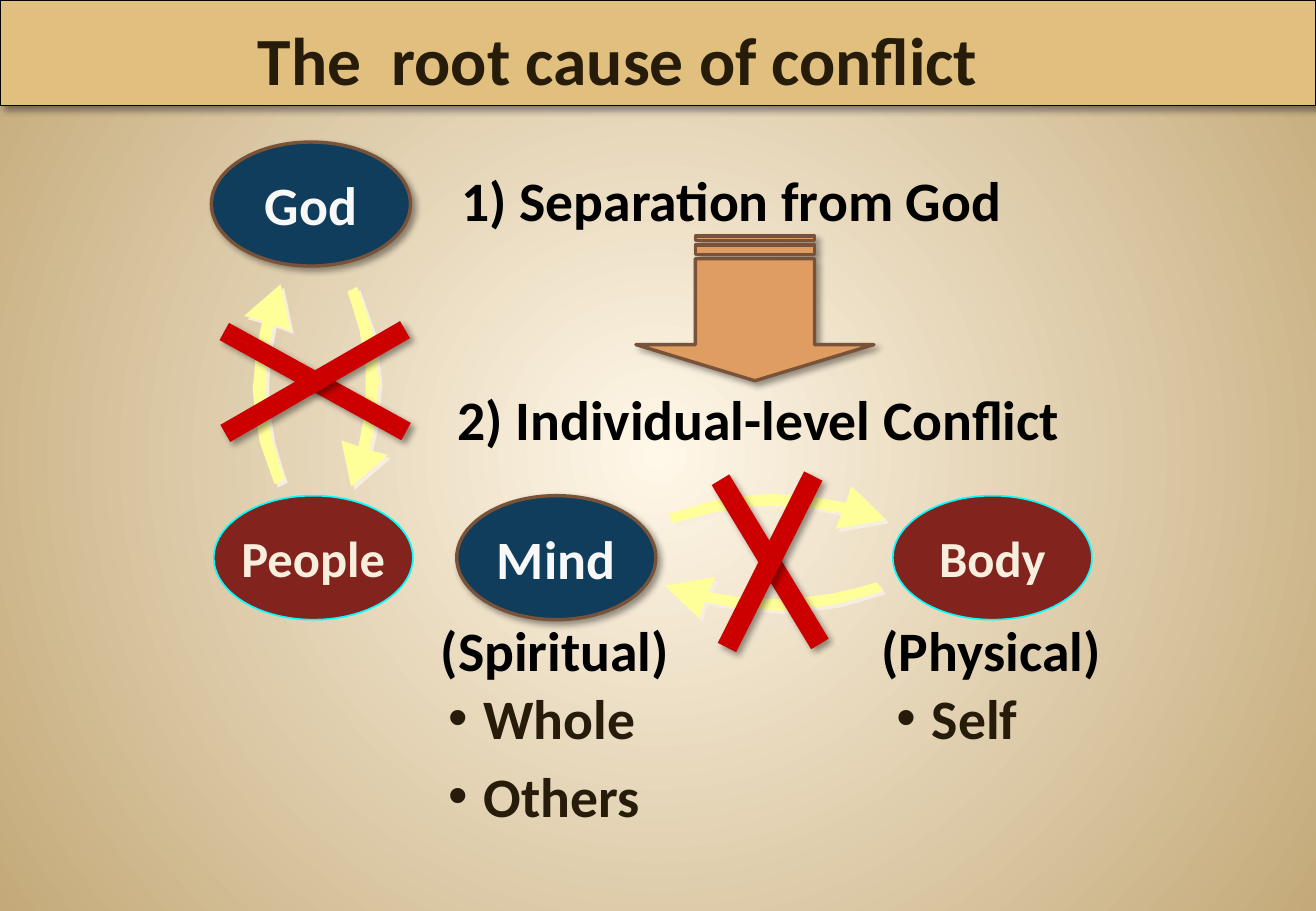
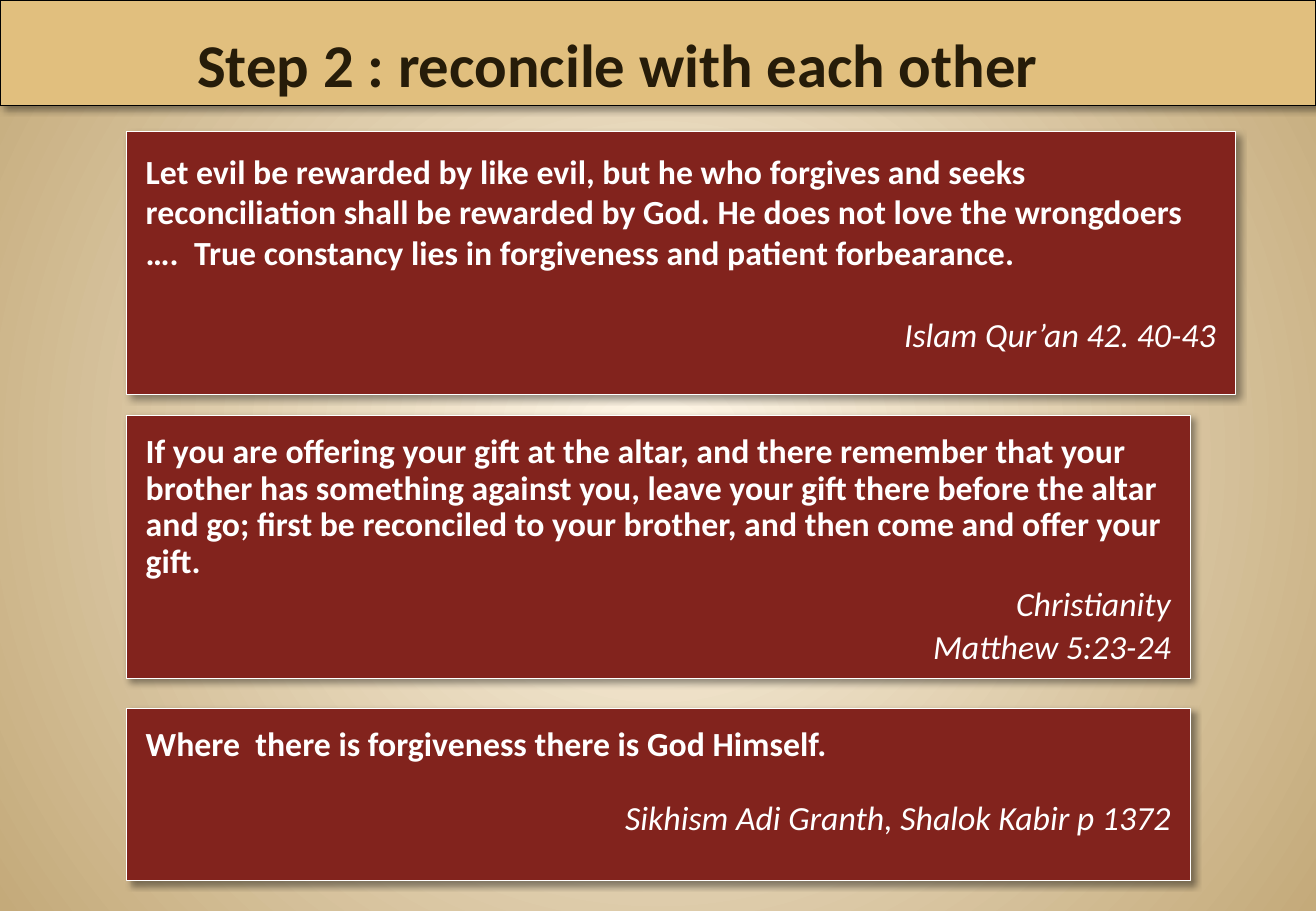
from lxml import etree
from pptx import Presentation
from pptx.dml.color import RGBColor
from pptx.enum import shapes as es, text as et
from pptx.oxml import ns
from pptx.util import Pt

# Shared style
FONT = "Calibri"
NAVY, WINE, BROWN, CREAM = "113D5C", "82231D", "795339", "F7EEDD"
DARK, WHITE, BLACK, RED = "261C09", "FFFFFF", "000000", "CC0000"
SAND, YELLOW, ORANGE, CYAN = "E1BF7E", "FFFF99", "DF9D62", "00FFFF"
SOFT = (BLACK, 40, 4, 3)  # shadow colour, opacity %, blur, distance
HARD = (CREAM, 100, 0, 2.8)
LEFT, MID, RIGHT = et.PP_ALIGN.LEFT, et.PP_ALIGN.CENTER, et.PP_ALIGN.RIGHT
KIND = es.MSO_SHAPE
hue = RGBColor.from_string


def paint(shape, fill, line=None, width=1, shadow=SOFT):
    shape.fill.solid()
    shape.fill.fore_color.rgb = hue(fill)
    if line:
        shape.line.color.rgb = hue(line)
        shape.line.width = Pt(width)
    else:
        shape.line.fill.background()
    shape.shadow.inherit = False
    if shadow:
        tone, alpha, blur, dist = shadow
        effects = shape.element.spPr.find(ns.qn("a:effectLst"))
        outer = etree.SubElement(
            effects, ns.qn("a:outerShdw"), blurRad=str(Pt(blur)),
            dist=str(Pt(dist)), dir="2700000", algn="tl", rotWithShape="0")
        color = etree.SubElement(outer, ns.qn("a:srgbClr"), val=tone)
        etree.SubElement(color, ns.qn("a:alpha"), val=str(alpha * 1000))


def write(frame, text, size=33, color=BLACK, bold=True, italic=False,
          align=LEFT, gap=0, lead=1.0, bullet=False):
    para = frame.add_paragraph() if frame.text else frame.paragraphs[0]
    para.alignment = align
    para.space_before = Pt(gap)
    para.line_spacing = lead
    if bullet:
        props = para._p.get_or_add_pPr()
        props.set("marL", str(Pt(21)))
        props.set("indent", str(Pt(-21)))
        etree.SubElement(props, ns.qn("a:buFont"), typeface="Arial")
        etree.SubElement(props, ns.qn("a:buChar"), char="•")
    run = para.add_run()
    run.text = text
    font = run.font
    font.name, font.size = FONT, Pt(size)
    font.bold, font.italic = bold, italic
    font.color.rgb = hue(color)


deck = Presentation()
deck.slide_width, deck.slide_height = Pt(780), Pt(540)

# Radial background on the master
master = deck.slide_master
back = master.background.fill
back.gradient()
for stop, tone in zip(back.gradient_stops, ("FFF7E8", "C4AA7A")):
    stop.color.rgb = hue(tone)
grad = master.element.find(".//" + ns.qn("a:gradFill"))
grad.remove(grad.find(ns.qn("a:lin")))
glow = etree.SubElement(grad, ns.qn("a:path"), path="circle")
etree.SubElement(glow, ns.qn("a:fillToRect"),
                 {side: "50000" for side in "ltrb"})

# Slides with their title bands
pages = []
for text, size in (("The  root cause of conflict", 40),
                   ("Step 2 : reconcile with each other", 36)):
    page = deck.slides.add_slide(deck.slide_layouts[5])
    band = page.shapes.title
    band.left, band.top = Pt(0), Pt(0)
    band.width, band.height = Pt(780), Pt(62.6)
    paint(band, SAND, BLACK, 0.75)
    frame = band.text_frame
    frame.auto_size = et.MSO_AUTO_SIZE.NONE
    frame.vertical_anchor = et.MSO_ANCHOR.BOTTOM
    frame.margin_right = Pt(55)
    write(frame, text, size=size, color=DARK, align=MID)
    pages.append(page.shapes)
cause, step = pages

# Curved arrows: one outline, turned four ways
CURVE = [(24, 33), (21, 48), (19, 58), (18, 78), (18, 98), (20, 110),
         (23, 128), (28, 145), (33, 160), (25, 164), (19, 147), (13, 130),
         (10, 112), (8, 96), (7, 86), (8, 77), (10, 53), (15, 30), (0, 26),
         (30, 0), (38, 38)]
unit = [(x / 38, y / 164) for x, y in CURVE]
for left, top, wide, high, turn in (
        (394, 342, 129, 24.5, lambda x, y: (y, 1 - x)),
        (396, 288, 129, 25.5, lambda x, y: (1 - y, x)),
        (144.7, 168.5, 27.4, 118.5, lambda x, y: (x, y)),
        (202.3, 170, 27.4, 118.5, lambda x, y: (1 - x, 1 - y))):
    dots = [turn(x, y) for x, y in unit]
    spots = [(Pt(left + x * wide), Pt(top + y * high)) for x, y in dots]
    build = cause.build_freeform(*spots[0], scale=1.0)
    build.add_line_segments(spots[1:], close=True)
    paint(build.convert_to_shape(), YELLOW, shadow=HARD)

# Ovals
for text, left, top, lit in (("God", 125.3, 84.2, True),
                             ("People", 126.7, 293.8, False),
                             ("Mind", 270.7, 293.8, True),
                             ("Body", 529.2, 293.8, False)):
    oval = cause.add_shape(KIND.OVAL, Pt(left), Pt(top), Pt(118), Pt(73.5))
    oval.text_frame.word_wrap = False
    if lit:
        paint(oval, NAVY, BROWN, 2)
        write(oval.text_frame, text, size=32, color="F8F8F8", align=MID)
    else:
        paint(oval, WINE, CYAN, 1, shadow=None)
        write(oval.text_frame, text, size=30, color=CREAM, align=MID)

# Red crosses
for left, top, wide, high, turns in (
        (125.3, 220.3, 123, 11.7, (208.8, 330)),
        (399.6, 326.9, 113.8, 12.2, (238.8, 296.7))):
    for turn in turns:
        bar = cause.add_shape(KIND.RECTANGLE, Pt(left), Pt(top),
                              Pt(wide), Pt(high))
        bar.rotation = turn
        paint(bar, RED)

# Headings, captions and bullet lists
HEAD = dict(color=BLACK)
NOTE = dict(color=BLACK, align=MID)
LIST = dict(color=DARK, bullet=True)
for lines, left, top, wide, style in (
        (["1) Separation from God"], 266.4, 95, 471.6, HEAD),
        (["2) Individual-level Conflict"], 264.2, 224.6, 471.6, HEAD),
        (["(Spiritual)"], 246.2, 361.4, 165.6, NOTE),
        (["(Physical)"], 504.7, 361.4, 165.6, NOTE),
        (["Whole", "Others"], 258.5, 401.8, 184.3, LIST),
        (["Self"], 524.2, 401.8, 184.3, LIST)):
    box = cause.add_textbox(Pt(left), Pt(top), Pt(wide),
                            Pt(47.5 * len(lines)))
    box.text_frame.word_wrap = True
    for i, line in enumerate(lines):
        write(box.text_frame, line, gap=6.6 * i, **style)

# Striped arrow between the headings
arrow = cause.add_shape(KIND.STRIPED_RIGHT_ARROW, Pt(404.6), Pt(112.3),
                        Pt(85.7), Pt(141.1))
arrow.adjustments[0], arrow.adjustments[1] = 0.5, 0.25
arrow.rotation = 90
paint(arrow, ORANGE, BROWN, 2)

# Quotation cards
for top, wide, high, lead, gap, quote, origin in (
        (77.8, 657.4, 156.2, 1.0, 24.4,
         "Let evil be rewarded by like evil, but he who forgives and seeks "
         "reconciliation shall be rewarded by God. He does not love the "
         "wrongdoers ….  True constancy lies in forgiveness and patient "
         "forbearance.",
         ["Islam Qur’an 42. 40-43"]),
        (246.2, 630.7, 156.2, 0.9, 4,
         "If you are offering your gift at the altar, and there remember "
         "that your brother has something against you, leave your gift there "
         "before the altar and go; first be reconciled to your brother, and "
         "then come and offer your gift.",
         ["Christianity", "Matthew 5:23-24"]),
        (419.8, 630.7, 102.2, 0.9, 22,
         "Where  there is forgiveness there is God Himself.",
         ["Sikhism Adi Granth, Shalok Kabir p 1372"])):
    card = step.add_shape(KIND.RECTANGLE, Pt(74.9), Pt(top),
                          Pt(wide), Pt(high))
    paint(card, WINE, WHITE, 0.75)
    frame = card.text_frame
    frame.word_wrap = True
    frame.vertical_anchor = et.MSO_ANCHOR.TOP
    frame.margin_left = frame.margin_right = Pt(11.5)
    frame.margin_top = frame.margin_bottom = Pt(11.5)
    write(frame, quote, size=20, color=WHITE, lead=lead)
    for line in origin:
        write(frame, line, size=20, color=WHITE, bold=False, italic=True,
              align=RIGHT, gap=gap, lead=lead)

deck.save("out.pptx")
